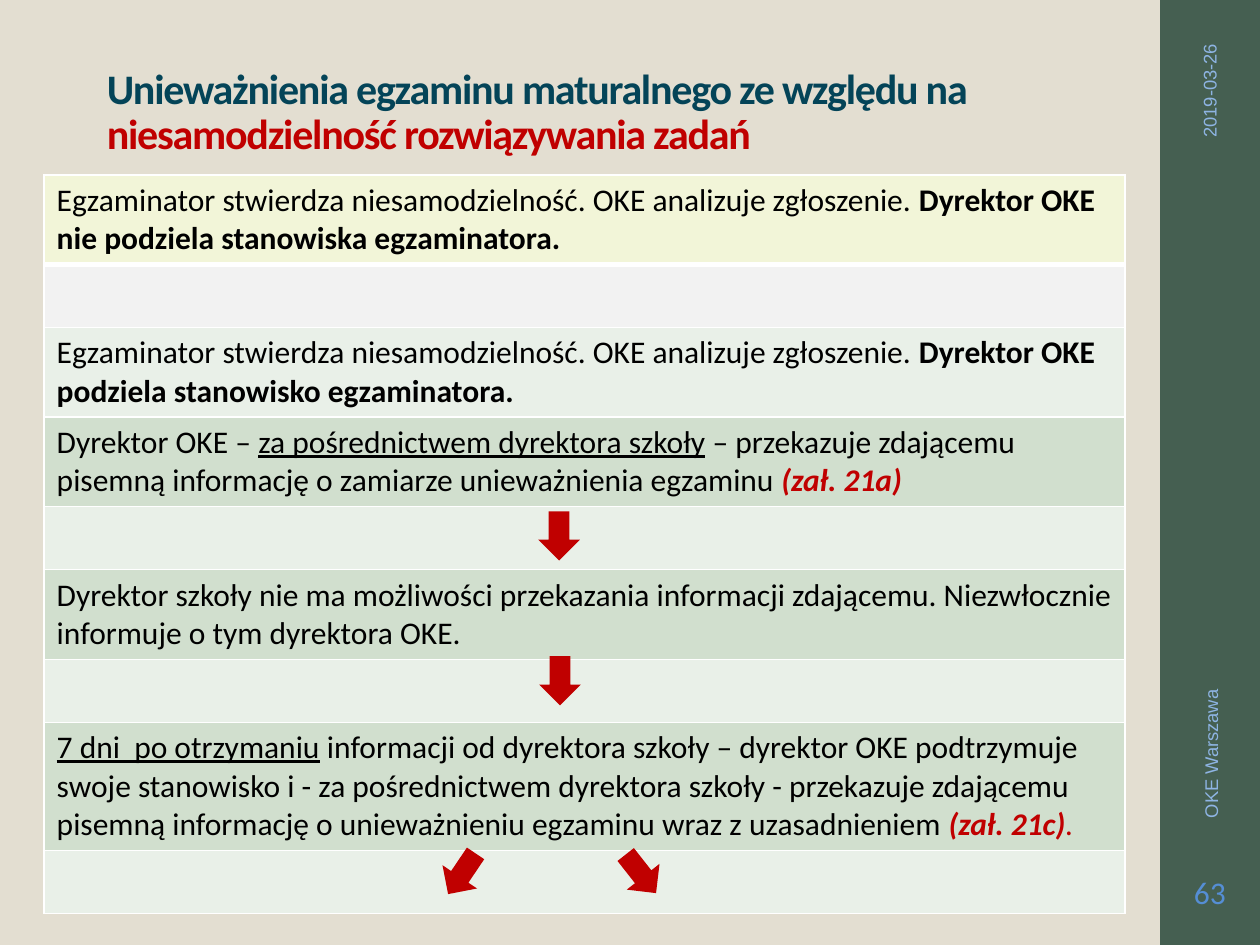
import pptx
import pptx.dml.color
import pptx.enum.shapes
import pptx.enum.text
import pptx.oxml
import pptx.oxml.ns
import pptx.util
from pptx.util import Cm, Pt

ALIGN = pptx.enum.text.PP_ALIGN
ANCHOR = pptx.enum.text.MSO_ANCHOR
SHAPE = pptx.enum.shapes.MSO_SHAPE

RED, GREEN, PALE, MIST = "C00000", "D1DFCE", "E9F0E8", "F2F2F2"
PLAIN = {"size": Pt(18), "name": "Calibri", "bold": False}
BOLD = {**PLAIN, "bold": True}
UNDERLINED = {**PLAIN, "underline": True}
ATTACHMENT = {**BOLD, "italic": True}
TITLE = {**BOLD, "size": Pt(24)}
SIDE = {"size": Pt(10.5), "name": "Arial"}
BLACK = "000000"

GAP, TWO_LINES, THREE_LINES = 1.27, 1.79, 2.58
REPORT = "Egzaminator stwierdza niesamodzielność. OKE analizuje zgłoszenie. "
STEPS = [
    (TWO_LINES, "F2F5D8", [
        (REPORT, PLAIN, BLACK),
        ("Dyrektor OKE nie podziela stanowiska egzaminatora.", BOLD, BLACK)]),
    (GAP, MIST, []),
    (TWO_LINES, PALE, [
        (REPORT, PLAIN, BLACK),
        ("Dyrektor OKE podziela stanowisko egzaminatora.", BOLD, BLACK)]),
    (TWO_LINES, GREEN, [
        ("Dyrektor OKE – ", PLAIN, BLACK),
        ("za pośrednictwem dyrektora szkoły", UNDERLINED, BLACK),
        (" – przekazuje zdającemu pisemną informację o zamiarze "
         "unieważnienia egzaminu ", PLAIN, BLACK),
        ("(zał. 21a)", ATTACHMENT, RED)]),
    (GAP, PALE, []),
    (TWO_LINES, GREEN, [
        ("Dyrektor szkoły nie ma możliwości przekazania informacji zdającemu. "
         "Niezwłocznie informuje o tym dyrektora OKE.", PLAIN, BLACK)]),
    (GAP, PALE, []),
    (THREE_LINES, GREEN, [
        ("7 dni  po otrzymaniu", UNDERLINED, BLACK),
        (" informacji od dyrektora szkoły – dyrektor OKE podtrzymuje swoje "
         "stanowisko i - za pośrednictwem dyrektora szkoły - przekazuje "
         "zdającemu pisemną informację o unieważnieniu egzaminu wraz "
         "z uzasadnieniem ", PLAIN, BLACK),
        ("(zał. 21c)", ATTACHMENT, RED),
        (".", {**PLAIN, "italic": True}, RED)]),
    (GAP, PALE, []),
]


def paint(fill, colour):
    """Give a fill a solid colour from a hex string."""
    fill.solid()
    fill.fore_color.rgb = pptx.dml.color.RGBColor.from_string(colour)


def set_attributes(target, values):
    """Set each named attribute of the target."""
    for name, value in values.items():
        setattr(target, name, value)


def write_runs(paragraph, runs):
    """Add formatted runs to a paragraph."""
    for text, values, colour in runs:
        run = paragraph.add_run()
        run.text = text
        set_attributes(run.font, values)
        paint(run.font.fill, colour)


def add_figure(slide, preset, box, colour, rotation=0):
    """Add a filled preset shape without outline."""
    figure = slide.shapes.add_shape(preset, *map(Cm, box))
    figure.shadow.inherit = False
    figure.rotation = rotation
    paint(figure.fill, colour)
    figure.line.fill.background()


def add_label(slide, box, run, align, rotation=0, margin=0.25):
    """Add a one-line label to the side band."""
    label = slide.shapes.add_textbox(*map(Cm, box))
    label.rotation = rotation
    frame = label.text_frame
    set_attributes(frame, {"word_wrap": True, "vertical_anchor": ANCHOR.MIDDLE,
                           "margin_left": Cm(margin), "margin_right": Cm(margin)})
    frame.paragraphs[0].alignment = align
    write_runs(frame.paragraphs[0], [run])


def add_title(slide):
    """Place and write the two-colour title."""
    title = slide.shapes.title
    set_attributes(title, {"left": Cm(1.9), "top": Cm(1.02),
                           "width": Cm(20.93), "height": Cm(2.31)})
    set_attributes(title.text_frame, {
        "word_wrap": True, "vertical_anchor": ANCHOR.BOTTOM,
        "auto_size": pptx.enum.text.MSO_AUTO_SIZE.NONE})
    heading = title.text_frame.paragraphs[0]
    set_attributes(heading, {"alignment": ALIGN.LEFT, "line_spacing": 0.9})
    write_runs(heading, [
        ("Unieważnienia egzaminu maturalnego ze względu na ", TITLE, "044458"),
        ("niesamodzielność rozwiązywania zadań", TITLE, RED)])
    for run in heading.runs:
        run.font._element.set("spc", "-70")


def add_border(cell, side, points):
    """Draw one white border of a cell."""
    cell._tc.get_or_add_tcPr().append(pptx.oxml.parse_xml(
        f'<a:ln{side} {pptx.oxml.ns.nsdecls("a")} w="{Pt(points)}"><a:solidFill>'
        f'<a:srgbClr val="FFFFFF"/></a:solidFill></a:ln{side}>'))


def add_steps(slide):
    """Build the one-column table of procedure steps."""
    height = sum(step[0] for step in STEPS)
    table = slide.shapes.add_table(
        len(STEPS), 1, Cm(0.89), Cm(3.53), Cm(21.79), Cm(height)).table
    set_attributes(table, {"first_row": False, "horz_banding": False})
    for index, (row_height, colour, runs) in enumerate(STEPS):
        table.rows[index].height = Cm(row_height)
        cell = table.cell(index, 0)
        for side in "LRTB":
            under_header = (index, side) in ((0, "B"), (1, "T"))
            add_border(cell, side, 3 if under_header else 1)
        paint(cell.fill, colour)
        write_runs(cell.text_frame.paragraphs[0], runs)


def main():
    """Build and save the slide."""
    deck = pptx.Presentation()
    set_attributes(deck, {"slide_width": Cm(25.4), "slide_height": Cm(19.05)})
    slide = deck.slides.add_slide(deck.slide_layouts[5])
    paint(slide.background.fill, "E3DED1")
    add_figure(slide, SHAPE.RECTANGLE, (23.39, 0, 2.01, 19.05), "455F51")
    add_title(slide)
    add_steps(slide)
    add_label(slide, (21.74, 2.9, 5.28, 0.76),
              ("2019-03-26", SIDE, "8EB4E3"), ALIGN.RIGHT, 270)
    add_label(slide, (19.43, 11.38, 9.96, 0.76),
              ("OKE Warszawa", SIDE, "8EB4E3"), ALIGN.LEFT, 270)
    add_label(slide, (23.44, 17.15, 1.9, 1.65),
              ("63", {"size": Pt(18), "name": "Calibri"}, "558ED5"),
              ALIGN.CENTER, margin=0.08)
    for left, top, rotation in ((10.87, 13.23, 0), (10.85, 10.31, 0),
                                (12.5, 17.12, 321.8), (8.89, 17.12, 34)):
        add_figure(slide, SHAPE.DOWN_ARROW, (left, top, 0.84, 0.99), RED, rotation)
    deck.save("out.pptx")


if __name__ == "__main__":
    main()
